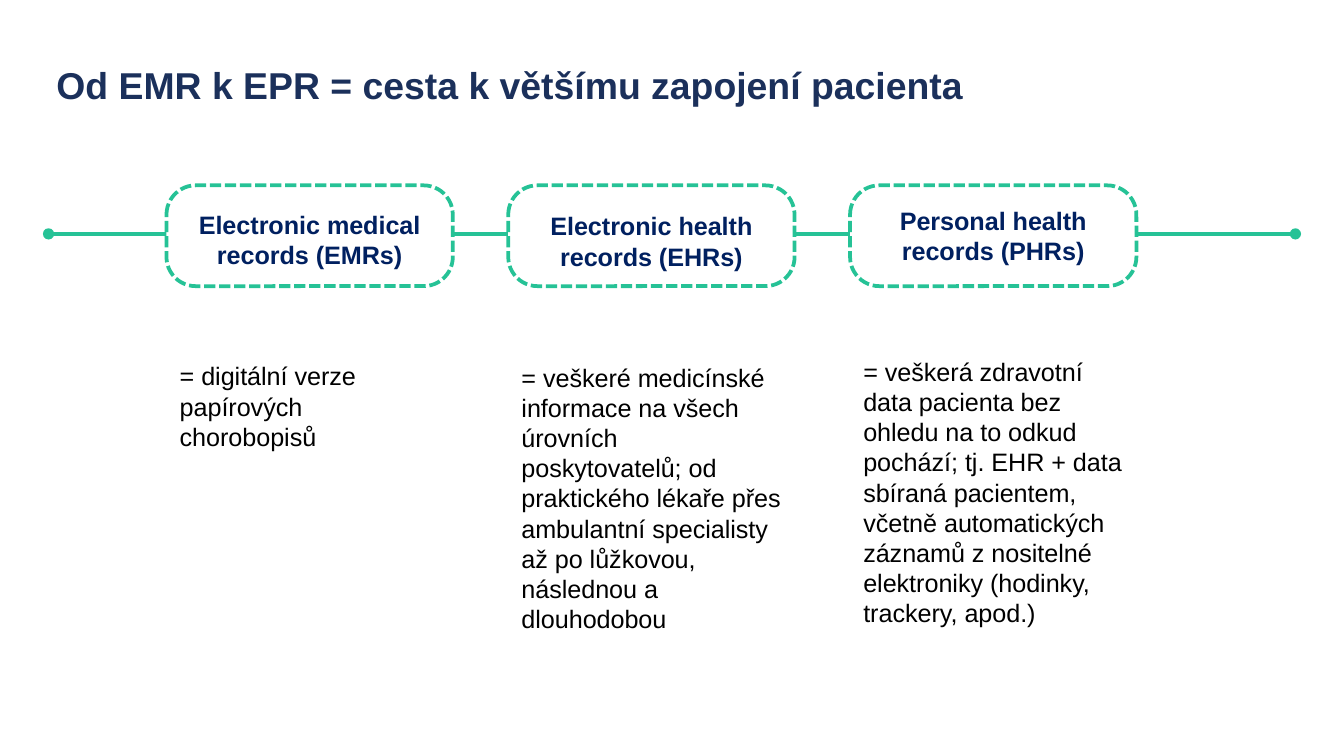
import pptx
import pptx.dml.color
import pptx.enum.dml
import pptx.enum.shapes
import pptx.enum.text
import pptx.util
from lxml import etree
from pptx.oxml.ns import qn

Pt = pptx.util.Pt


def colour(value):
    return pptx.dml.color.RGBColor.from_string(value)


class SlideBuilder:
    FONT = "Arial"
    GREEN = "26C296"
    NAVY = "002060"
    TITLE = "1B305B"
    BODY_SIZE = 13.5
    LINE_WIDTH = 2

    def __init__(self, slide):
        self.slide = slide

    def format_paragraph(self, para, size, hex_colour, bold=False):
        for span in para.runs:
            span.font.name = self.FONT
            span.font.size = Pt(size)
            span.font.bold = bold
            span.font.color.rgb = colour(hex_colour)

    def text_box(self, left, top, width, height):
        box = self.slide.shapes.add_textbox(Pt(left), Pt(top), Pt(width), Pt(height))
        box.text_frame.word_wrap = True
        return box.text_frame

    def title(self, text, left, top, width, height):
        frame = self.text_box(left, top, width, height)
        frame.margin_left = frame.margin_right = Pt(4.2)
        frame.margin_top = frame.margin_bottom = Pt(2.1)
        frame.text = text
        para = frame.paragraphs[0]
        para.line_spacing = 0.9
        self.format_paragraph(para, 20, self.TITLE, bold=True)

    def timeline(self, left, right, y):
        line = self.slide.shapes.add_connector(
            pptx.enum.shapes.MSO_CONNECTOR.STRAIGHT, Pt(left), Pt(y), Pt(right), Pt(y))
        line.line.color.rgb = colour(self.GREEN)
        line.line.width = Pt(self.LINE_WIDTH)
        outline = line.line._get_or_add_ln()
        for end in ("a:headEnd", "a:tailEnd"):
            etree.SubElement(outline, qn(end), type="oval")
        etree.SubElement(line._element.spPr, qn("a:effectLst"))

    def frame(self, left, top, width, height):
        shape = self.slide.shapes.add_shape(
            pptx.enum.shapes.MSO_SHAPE.ROUNDED_RECTANGLE,
            Pt(left), Pt(top), Pt(width), Pt(height))
        shape.adjustments[0] = 0.29
        shape.shadow.inherit = False
        shape.fill.solid()
        shape.fill.fore_color.rgb = colour("FFFFFF")
        shape.line.color.rgb = colour(self.GREEN)
        shape.line.width = Pt(self.LINE_WIDTH)
        shape.line.dash_style = pptx.enum.dml.MSO_LINE.SQUARE_DOT

    def record(self, heading, description, left, top, width, height):
        text_frame = self.text_box(left, top, width, height)
        text_frame.text = heading
        para = text_frame.paragraphs[0]
        para.alignment = pptx.enum.text.PP_ALIGN.CENTER
        self.format_paragraph(para, self.BODY_SIZE, self.NAVY, bold=True)
        para = text_frame.add_paragraph()
        para.text = description
        para.space_before = Pt(48.6)
        self.format_paragraph(para, self.BODY_SIZE, "000000")


# Heading, description, text top and text height
RECORDS = [
    ("Electronic medical records (EMRs)",
     "= digitální verze papírových chorobopisů", 108.7, 194.4),
    ("Electronic health records (EHRs)",
     "= veškeré medicínské informace na všech úrovních poskytovatelů; od "
     "praktického lékaře přes ambulantní specialisty až po lůžkovou, "
     "následnou a dlouhodobou", 109.4, 247),
    ("Personal health records (PHRs)",
     "= veškerá zdravotní data pacienta bez ohledu na to odkud pochází; "
     "tj. EHR + data sbíraná pacientem, včetně automatických záznamů "
     "z nositelné elektroniky (hodinky, trackery, apod.)", 106.2, 254.2),
]
FIRST_LEFT, STEP, CARD_WIDTH = 89.2, 183.1, 153.4


def main():
    deck = pptx.Presentation()
    deck.slide_width, deck.slide_height = Pt(720), Pt(405)
    builder = SlideBuilder(deck.slides.add_slide(deck.slide_layouts[6]))

    # Timeline and title
    builder.timeline(26, 694, 125.3)
    builder.title("Od EMR k EPR = cesta k většímu zapojení pacienta",
                  26, 33.8, 644.4, 66.2)

    # Record types along the timeline
    for index, (heading, description, top, height) in enumerate(RECORDS):
        left = FIRST_LEFT + index * STEP
        builder.frame(left, 99.3, CARD_WIDTH, 54)
        builder.record(heading, description, left, top, CARD_WIDTH, height)

    deck.save("out.pptx")


if __name__ == "__main__":
    main()
